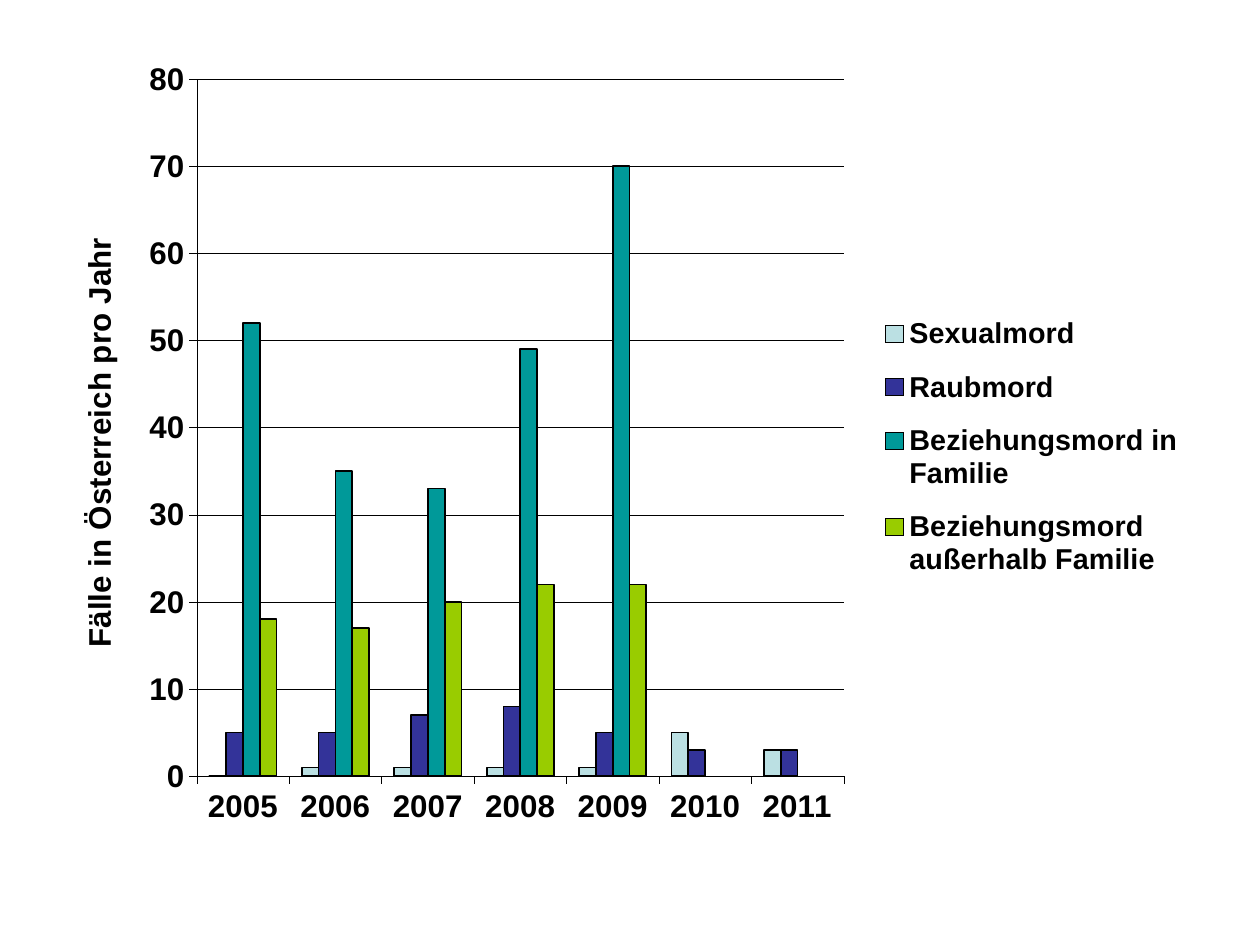
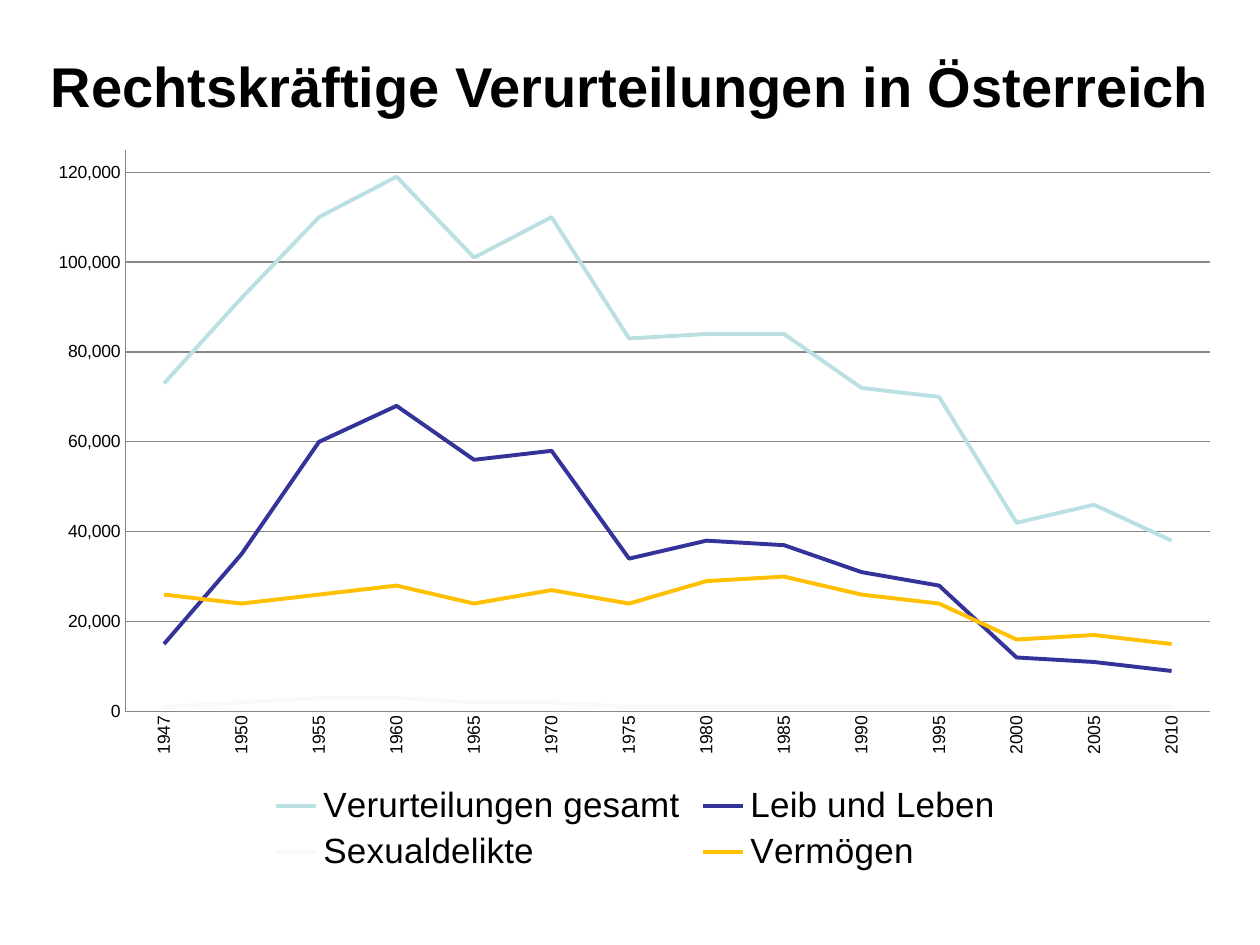
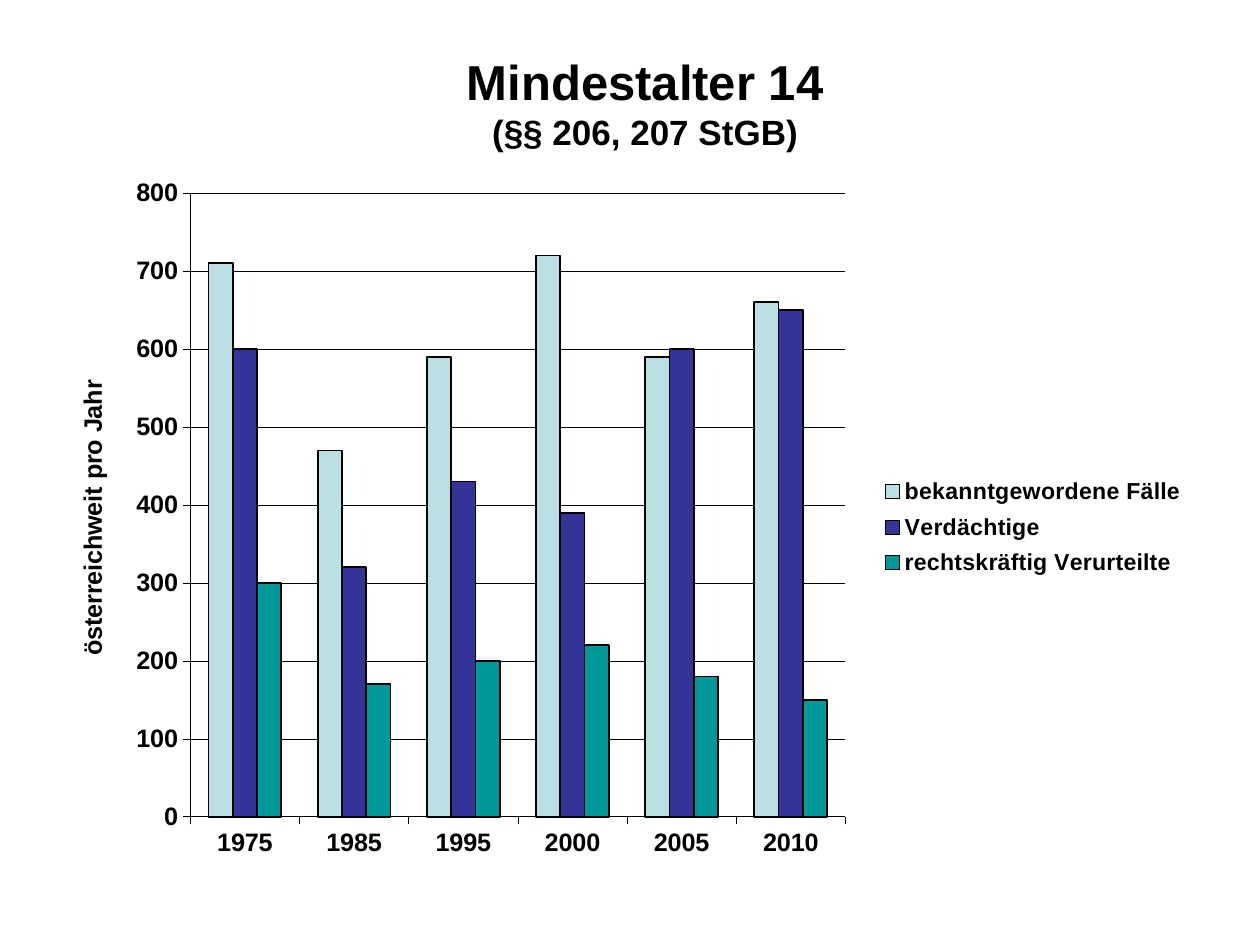
import pptx
import pptx.chart.data
import pptx.dml.color
import pptx.enum.chart
import pptx.enum.text
import pptx.oxml
import pptx.oxml.ns
import pptx.util

Cm = pptx.util.Cm
Pt = pptx.util.Pt
chart_enum = pptx.enum.chart

FONT = "Arial"
COLORS = {
    "black": "000000",
    "grid": "878787",
    "pale": "BBE0E3",
    "navy": "333399",
    "teal": "009999",
    "green": "99CC00",
    "faint": "F9F9F9",
    "gold": "FFC000",
}


def color(name):
    return pptx.dml.color.RGBColor.from_string(COLORS[name])


def set_layout(parent, index, target, bounds):
    for old in parent.findall(pptx.oxml.ns.qn("c:layout")):
        parent.remove(old)
    parts = f'<c:layoutTarget val="{target}"/>' if target else ""
    parts += '<c:xMode val="edge"/><c:yMode val="edge"/>'
    for key, value in zip("xywh", bounds):
        parts += f'<c:{key} val="{value}"/>'
    namespace = pptx.oxml.ns.nsdecls("c")
    parent.insert(index, pptx.oxml.parse_xml(
        f"<c:layout {namespace}><c:manualLayout>{parts}</c:manualLayout></c:layout>"))


slides = [
    {
        "kind": "column",
        "bounds": (1.42, 0.91, 22.73, 16.36),
        "plot": (0.112, 0.042, 0.574, 0.859),
        "legend": (0.71, 0.31, 0.285, 0.37),
        "size": 17.9,
        "legend_size": 16.4,
        "axis_title": "Fälle in Österreich pro Jahr",
        "maximum": 80,
        "major": 10,
        "categories": ["2005", "2006", "2007", "2008", "2009", "2010", "2011"],
        "series": [
            ("Sexualmord", "pale", [0, 1, 1, 1, 1, 5, 3]),
            ("Raubmord", "navy", [5, 5, 7, 8, 5, 3, 3]),
            ("Beziehungsmord in Familie", "teal", [52, 35, 33, 49, 70, None, None]),
            ("Beziehungsmord außerhalb Familie", "green", [18, 17, 20, 22, 22, None, None]),
        ],
    },
    {
        "kind": "line",
        "heading": [("Rechtskräftige Verurteilungen in Österreich", 32)],
        "heading_bounds": (0.71, 0.91, 24, 16.1),
        "bounds": (0.71, 2.72, 24.2, 15),
        "plot": (0.075, 0.02, 0.904, 0.755),
        "size": 10,
        "legend_size": 20,
        "maximum": 125000,
        "major": 20000,
        "categories": ["1947"] + [str(year) for year in range(1950, 2011, 5)],
        "series": [
            ("Verurteilungen gesamt", "pale",
             [73000, 92000, 110000, 119000, 101000, 110000, 83000,
              84000, 84000, 72000, 70000, 42000, 46000, 38000]),
            ("Leib und Leben", "navy",
             [15000, 35000, 60000, 68000, 56000, 58000, 34000,
              38000, 37000, 31000, 28000, 12000, 11000, 9000]),
            ("Sexualdelikte", "faint",
             [1000, 2000, 3000, 3000, 2000, 2000, 1000,
              1000, 1000, 1000, 1000, 1000, 1000, 1000]),
            ("Vermögen", "gold",
             [26000, 24000, 26000, 28000, 24000, 27000, 24000,
              29000, 30000, 26000, 24000, 16000, 17000, 15000]),
        ],
    },
    {
        "kind": "column",
        "heading": [("Mindestalter 14", 28), ("(§§ 206, 207 StGB)", 20)],
        "heading_bounds": (1.5, 0.91, 23.01, 2.29),
        "bounds": (1.45, 3.28, 22.73, 14.7),
        "plot": (0.105, 0.042, 0.581, 0.855),
        "legend": (0.71, 0.42, 0.285, 0.16),
        "size": 14.4,
        "legend_size": 13.2,
        "axis_title": "österreichweit pro Jahr",
        "maximum": 800,
        "major": 100,
        "categories": ["1975", "1985", "1995", "2000", "2005", "2010"],
        "series": [
            ("bekanntgewordene Fälle", "pale", [710, 470, 590, 720, 590, 660]),
            ("Verdächtige", "navy", [600, 320, 430, 390, 600, 650]),
            ("rechtskräftig Verurteilte", "teal", [300, 170, 200, 220, 180, 150]),
        ],
    },
]

deck = pptx.Presentation()
deck.slide_width = Cm(25.4)
deck.slide_height = Cm(19.05)

for content in slides:
    page = deck.slides.add_slide(deck.slide_layouts[6])
    columns = content["kind"] == "column"

    if "heading" in content:
        box = page.shapes.add_textbox(*[Cm(value) for value in content["heading_bounds"]])
        frame = box.text_frame
        frame.word_wrap = True
        frame.text = "\n".join(line for line, size in content["heading"])
        for para, (line, size) in zip(frame.paragraphs, content["heading"]):
            para.alignment = pptx.enum.text.PP_ALIGN.CENTER
            span = para.runs[0]
            span.font.name = FONT
            span.font.size = Pt(size)
            span.font.bold = True
            span.font.color.rgb = color("black")

    data = pptx.chart.data.CategoryChartData()
    data.categories = content["categories"]
    for name, tint, values in content["series"]:
        data.add_series(name, values)
    chart_type = chart_enum.XL_CHART_TYPE.COLUMN_CLUSTERED if columns else chart_enum.XL_CHART_TYPE.LINE
    chart = page.shapes.add_chart(
        chart_type, *[Cm(value) for value in content["bounds"]], data).chart
    chart.has_title = False
    chart.has_legend = True
    legend = chart.legend
    legend.include_in_layout = False
    legend.position = (chart_enum.XL_LEGEND_POSITION.RIGHT if columns
                       else chart_enum.XL_LEGEND_POSITION.BOTTOM)

    category_axis = chart.category_axis
    value_axis = chart.value_axis
    value_axis.minimum_scale = 0
    value_axis.maximum_scale = content["maximum"]
    value_axis.major_unit = content["major"]
    value_axis.has_major_gridlines = True

    for font, size in [(chart.font, content["size"]),
                       (category_axis.tick_labels.font, content["size"]),
                       (value_axis.tick_labels.font, content["size"]),
                       (legend.font, content["legend_size"])]:
        font.name = FONT
        font.size = Pt(size)
        font.bold = columns
        font.color.rgb = color("black")

    for line in [category_axis.format.line, value_axis.format.line,
                 value_axis.major_gridlines.format.line]:
        line.color.rgb = color("black" if columns else "grid")
        line.width = Pt(0.25 if columns else 0.75)
    for axis in [category_axis, value_axis]:
        axis.major_tick_mark = (chart_enum.XL_TICK_MARK.OUTSIDE if columns
                                else chart_enum.XL_TICK_MARK.NONE)

    plot = chart.plots[0]
    plot.vary_by_categories = False
    for series, (name, tint, values) in zip(plot.series, content["series"]):
        line = series.format.line
        if columns:
            series.format.fill.solid()
            series.format.fill.fore_color.rgb = color(tint)
            line.color.rgb = color("black")
            line.width = Pt(1)
        else:
            line.color.rgb = color(tint)
            line.width = Pt(2.25)
            series.smooth = False
            series.marker.style = chart_enum.XL_MARKER_STYLE.NONE

    set_layout(plot._element.getparent(), 0, "inner", content["plot"])
    if columns:
        plot.gap_width = 150
        plot.overlap = 0
        category_axis.tick_label_position = chart_enum.XL_TICK_LABEL_POSITION.LOW
        set_layout(legend._element, 1, None, content["legend"])
        title_frame = value_axis.axis_title.text_frame
        title_frame.text = content["axis_title"]
        font = title_frame.paragraphs[0].runs[0].font
        font.name = FONT
        font.size = Pt(content["size"])
        font.bold = True
        font.color.rgb = color("black")
    else:
        value_axis.tick_labels.number_format = "#,##0"
        value_axis.tick_labels.number_format_is_linked = False
        category_axis._element.xpath("c:txPr/a:bodyPr")[0].set("rot", "-5400000")

deck.save("out.pptx")
